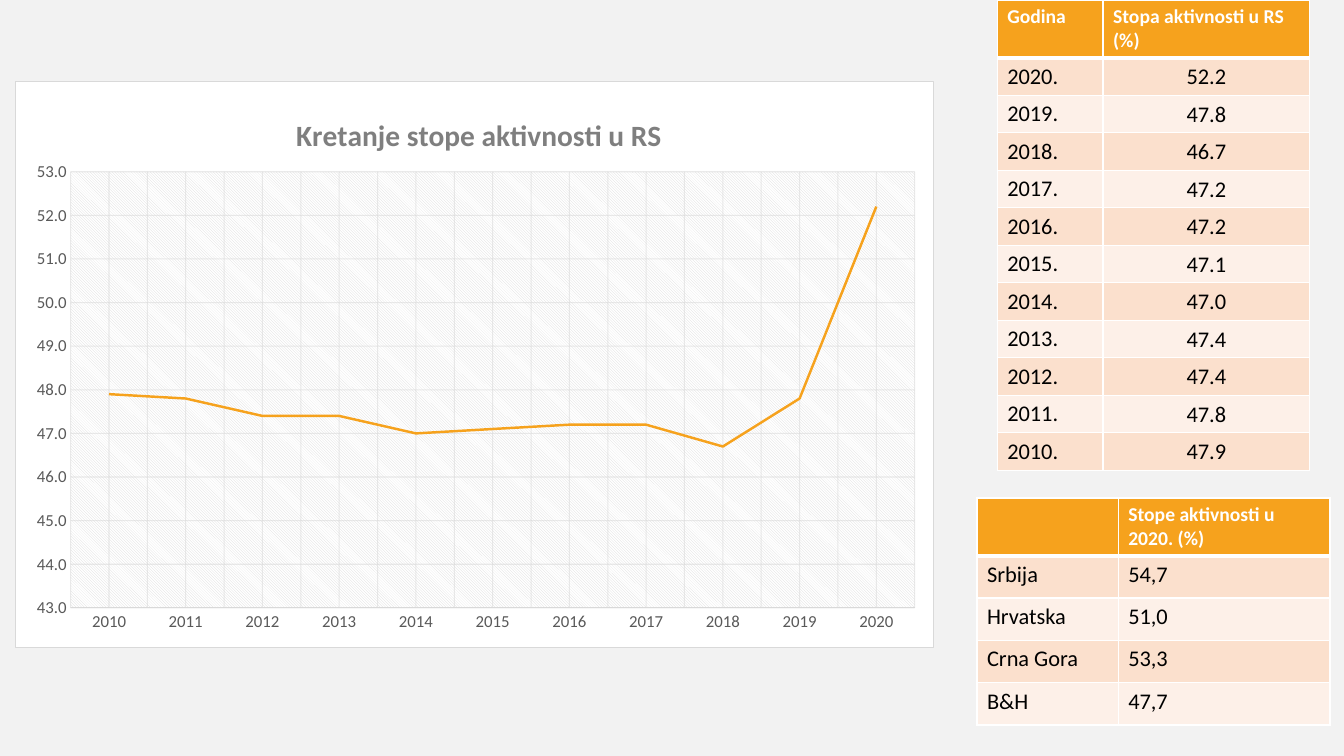
import copy
import pptx
import pptx.chart.data
import pptx.dml.color
import pptx.enum.chart
import pptx.enum.text
import pptx.oxml
import pptx.util
from pptx.util import Inches

NS = ('xmlns:a="http://schemas.openxmlformats.org/drawingml/2006/main" '
      'xmlns:c="http://schemas.openxmlformats.org/drawingml/2006/chart"')
ORANGE, WHITE, BORDER = "F6A21D", "FFFFFF", "D9D9D9"
BANDS = ["FBE0CD", "FDF0E8"]


def color(value):
    return pptx.dml.color.RGBColor.from_string(value)


def xml(text):
    head, tail = text.split(">", 1)
    if head.endswith("/"):
        return pptx.oxml.parse_xml(f"{head[:-1]} {NS}/>{tail}")
    return pptx.oxml.parse_xml(f"{head} {NS}>{tail}")


prs = pptx.Presentation()
prs.slide_width, prs.slide_height = Inches(13.33), Inches(7.5)
s = prs.slides.add_slide(prs.slide_layouts[6])
s.background.fill.solid()
s.background.fill.fore_color.rgb = color("F2F2F2")

years = list(range(2010, 2021))
rates = [47.9, 47.8, 47.4, 47.4, 47.0, 47.1, 47.2, 47.2, 46.7, 47.8, 52.2]

data = pptx.chart.data.CategoryChartData(number_format="0.0")
data.categories = [str(year) for year in years]
data.add_series("Series 1", rates)
chart = s.shapes.add_chart(pptx.enum.chart.XL_CHART_TYPE.LINE, Inches(0.15), Inches(0.8),
                           Inches(9.11), Inches(5.63), data).chart
chart.has_legend = False
chart.font.name = "Calibri"
chart.font.size = pptx.util.Pt(10)
chart.plots[0].vary_by_categories = False

series = chart.plots[0].series[0]
series.smooth = False
series.format.line.color.rgb = color(ORANGE)
series.format.line.width = pptx.util.Pt(1.75)
series.marker.style = pptx.enum.chart.XL_MARKER_STYLE.NONE

chart.has_title = True
p = chart.chart_title.text_frame.paragraphs[0]
r = p.add_run()
r.text = "Kretanje stope aktivnosti u RS"
r.font.name = "Calibri"
r.font.size = pptx.util.Pt(21)
r.font.bold = True
r.font.color.rgb = color("7F7F7F")

cat_axis, val_axis = chart.category_axis, chart.value_axis
for axis in (cat_axis, val_axis):
    axis.major_tick_mark = pptx.enum.chart.XL_TICK_MARK.NONE
    axis.minor_tick_mark = pptx.enum.chart.XL_TICK_MARK.NONE
    axis.tick_labels.font.name = "Calibri"
    axis.tick_labels.font.size = pptx.util.Pt(12)
    axis.tick_labels.font.color.rgb = color("595959")
    axis.has_major_gridlines = True
    line = axis.major_gridlines.format.line
    line.color.rgb = color(BORDER)
    line.width = pptx.util.Pt(0.75)
cat_axis.has_minor_gridlines = True
cat_axis.format.line.color.rgb = color(BORDER)
cat_axis.format.line.width = pptx.util.Pt(0.75)
val_axis.format.line.fill.background()
val_axis.minimum_scale, val_axis.maximum_scale, val_axis.major_unit = 43, 53, 1
val_axis.tick_labels.number_format = "0.0"
val_axis.tick_labels.number_format_is_linked = False

space = chart._chartSpace
for grid in space.iter("{*}majorGridlines"):
    for clr in grid.iter("{*}srgbClr"):
        clr.append(xml('<a:alpha val="54000"/>'))
minor = space.find(".//{*}minorGridlines")
minor.append(copy.deepcopy(minor.getparent().find("{*}majorGridlines/{*}spPr")))

title, plot = space.find(".//{*}title"), space.find(".//{*}plotArea")
for parent, index, place in [(title, 1, {"x": 0.3, "y": 0.05}),
                             (plot, 0, {"x": 0.06, "y": 0.16, "w": 0.92, "h": 0.77})]:
    for old in parent.findall("{*}layout"):
        parent.remove(old)
    target = '<c:layoutTarget val="inner"/>' if parent is plot else ""
    modes = "".join(f'<c:{k}Mode val="edge"/>' for k in "xy")
    sizes = "".join(f'<c:{k} val="{v}"/>' for k, v in place.items())
    parent.insert(index, xml(f"<c:layout><c:manualLayout>{target}{modes}{sizes}"
                             "</c:manualLayout></c:layout>"))
plot.append(xml('<c:spPr><a:pattFill prst="ltDnDiag">'
                f'<a:fgClr><a:srgbClr val="{BORDER}"/></a:fgClr>'
                f'<a:bgClr><a:srgbClr val="{WHITE}"/></a:bgClr></a:pattFill></c:spPr>'))
space.find("{*}chart").addnext(xml(
    f'<c:spPr><a:solidFill><a:srgbClr val="{WHITE}"/></a:solidFill><a:ln w="9525">'
    f'<a:solidFill><a:srgbClr val="{BORDER}"/></a:solidFill></a:ln></c:spPr>'))
space.find("{*}date1904").addnext(xml('<c:roundedCorners val="0"/>'))

yearly = [("Godina", "Stopa aktivnosti u RS (%)")]
yearly += [(f"{year}.", f"{rate:.1f}") for year, rate in zip(years[::-1], rates[::-1])]
countries = [("", "Stope aktivnosti u 2020. (%)"), ("Srbija", "54,7"),
             ("Hrvatska", "51,0"), ("Crna Gora", "53,3"), ("B&H", "47,7")]

for rows, left, top, widths, row_height, centred in [
        (yearly, 9.89, 0, (1.05, 2.05), 0.37, True),
        (countries, 9.69, 4.94, (1.4, 2.1), 0.42, False)]:
    table = s.shapes.add_table(len(rows), 2, Inches(left), Inches(top), Inches(sum(widths)),
                               Inches(0.57 + row_height * (len(rows) - 1))).table
    for col, width in zip(table.columns, widths):
        col.width = Inches(width)
    for i, row in enumerate(rows):
        table.rows[i].height = Inches(row_height if i else 0.57)
        for j, text in enumerate(row):
            cell = table.cell(i, j)
            for side in "LRTB":
                thick = (i, side) in [(0, "B"), (1, "T")]
                cell._tc.get_or_add_tcPr().append(xml(
                    f'<a:ln{side} w="{38100 if thick else 12700}"><a:solidFill>'
                    f'<a:srgbClr val="{WHITE}"/></a:solidFill></a:ln{side}>'))
            cell.fill.solid()
            cell.fill.fore_color.rgb = color(BANDS[(i - 1) % 2] if i else ORANGE)
            p = cell.text_frame.paragraphs[0]
            if centred and i and j:
                cell.vertical_anchor = pptx.enum.text.MSO_ANCHOR.MIDDLE
                cell.margin_left = cell.margin_right = cell.margin_top = Inches(0.01)
                cell.margin_bottom = 0
                p.alignment = pptx.enum.text.PP_ALIGN.CENTER
            if text:
                r = p.add_run()
                r.text = text
                r.font.name = "Calibri"
                r.font.size = pptx.util.Pt(16 if i else 14)
                r.font.bold = i == 0
                r.font.color.rgb = color("000000" if i else WHITE)

prs.save("out.pptx")
